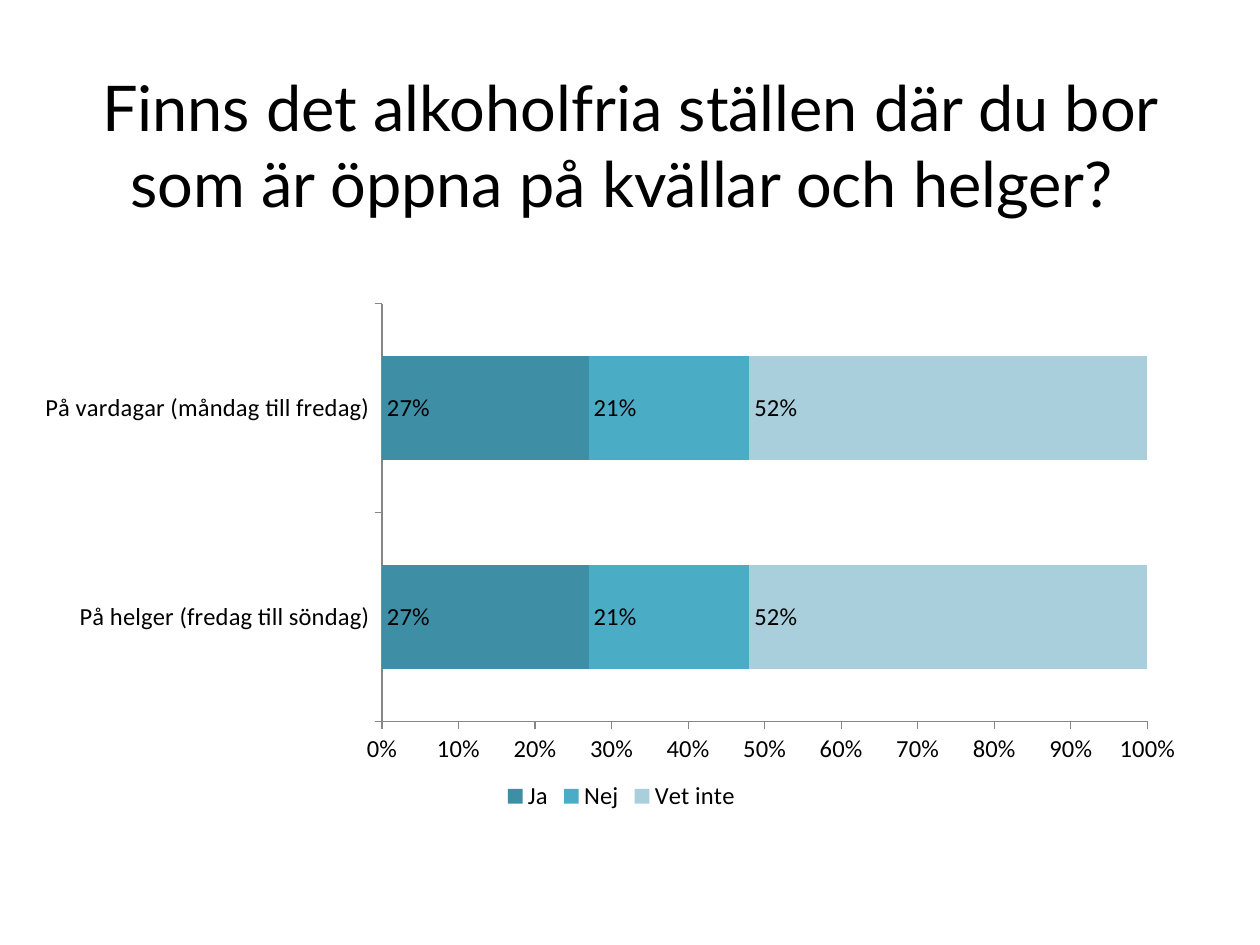
"""Build a slide with a stacked bar chart about alcohol-free venues."""
from dataclasses import dataclass

from lxml import etree
from pptx import Presentation
from pptx.chart.data import CategoryChartData
from pptx.dml.color import RGBColor
from pptx.enum.chart import (XL_CHART_TYPE, XL_LABEL_POSITION,
                             XL_LEGEND_POSITION, XL_TICK_MARK)
from pptx.enum.text import MSO_ANCHOR, PP_ALIGN
from pptx.oxml.ns import qn
from pptx.util import Inches, Pt

STACKED_BAR = XL_CHART_TYPE.BAR_STACKED_100
INSIDE_BASE = XL_LABEL_POSITION.INSIDE_BASE
BOTTOM = XL_LEGEND_POSITION.BOTTOM
TICK_OUTSIDE = XL_TICK_MARK.OUTSIDE
MIDDLE = MSO_ANCHOR.MIDDLE
CENTER = PP_ALIGN.CENTER


@dataclass(frozen=True)
class Theme:
    title_font: str = "Lato"
    chart_font: str = "Calibri"
    title_size: int = 36
    chart_size: int = 14
    text: str = "000000"
    axis: str = "868686"
    answers: tuple = ("3E8EA5", "4BACC6", "A9CEDC")


class SlideBuilder:
    def __init__(self, page, theme):
        self.page = page
        self.theme = theme

    def style_font(self, font, name, size):
        font.name = name
        font.size = Pt(size)
        font.color.rgb = RGBColor.from_string(self.theme.text)

    def title(self, text, left, top, width, height):
        box = self.page.shapes.add_textbox(
            Inches(left), Inches(top), Inches(width), Inches(height))
        frame = box.text_frame
        frame.word_wrap = True
        frame.vertical_anchor = MIDDLE
        para = frame.paragraphs[0]
        para.alignment = CENTER
        span = para.add_run()
        span.text = text
        self.style_font(span.font, self.theme.title_font, self.theme.title_size)

    def axis(self, axis):
        axis.has_major_gridlines = False
        axis.major_tick_mark = TICK_OUTSIDE
        axis.minor_tick_mark = XL_TICK_MARK.NONE
        axis.format.line.color.rgb = RGBColor.from_string(self.theme.axis)
        axis.format.line.width = Pt(0.75)

    def plot_area(self, chart, **position):
        area = chart.plots[0]._element.getparent()
        for old in area.findall(qn("c:layout")):
            area.remove(old)
        layout = etree.Element(qn("c:layout"))
        manual = etree.SubElement(layout, qn("c:manualLayout"))
        settings = {"layoutTarget": "inner", "xMode": "edge", "yMode": "edge",
                    **position}
        for tag, value in settings.items():
            etree.SubElement(manual, qn(f"c:{tag}")).set("val", str(value))
        area.insert(0, layout)

    def bar_chart(self, categories, answers, left, top, width, height):
        data = CategoryChartData(number_format="0%")
        data.categories = categories
        for name, values in answers.items():
            data.add_series(name, values)
        chart = self.page.shapes.add_chart(
            STACKED_BAR, Inches(left), Inches(top), Inches(width),
            Inches(height), data).chart
        font, size = self.theme.chart_font, self.theme.chart_size
        self.style_font(chart.font, font, size)
        chart.has_title = False
        chart.has_legend = True
        chart.legend.position = BOTTOM
        chart.legend.include_in_layout = False
        self.style_font(chart.legend.font, font, size)
        self.axis(chart.category_axis)
        self.axis(chart.value_axis)
        chart.value_axis.minimum_scale = 0
        chart.value_axis.maximum_scale = 1
        chart.value_axis.major_unit = 0.1
        chart.value_axis.tick_labels.number_format = "0%"
        chart.value_axis.tick_labels.number_format_is_linked = False
        plot = chart.plots[0]
        plot.vary_by_categories = False
        plot.gap_width = 100
        plot.overlap = 100
        for series, color in zip(plot.series, self.theme.answers):
            series.format.fill.solid()
            series.format.fill.fore_color.rgb = RGBColor.from_string(color)
            labels = series.data_labels
            labels.show_value = True
            labels.number_format = "0%"
            labels.number_format_is_linked = False
            labels.position = INSIDE_BASE
            self.style_font(labels.font, font, size)
        self.plot_area(chart, x=0.292, y=0.281, w=0.665, h=0.586)


def main():
    deck = Presentation()
    deck.slide_width = Inches(10)
    deck.slide_height = Inches(7.5)
    page = deck.slides.add_slide(deck.slide_layouts[6])
    builder = SlideBuilder(page, Theme())
    builder.title("Finns det alkoholfria ställen där du bor som är öppna "
                  "på kvällar och helger? ", 0.5, 0.61, 9, 1.07)
    builder.bar_chart(
        ["På helger (fredag till söndag)", "På vardagar (måndag till fredag)"],
        {"Ja": (0.27, 0.27), "Nej": (0.21, 0.21), "Vet inte": (0.52, 0.52)},
        0.36, 0.82, 9.14, 5.66)
    deck.save("out.pptx")


if __name__ == "__main__":
    main()
